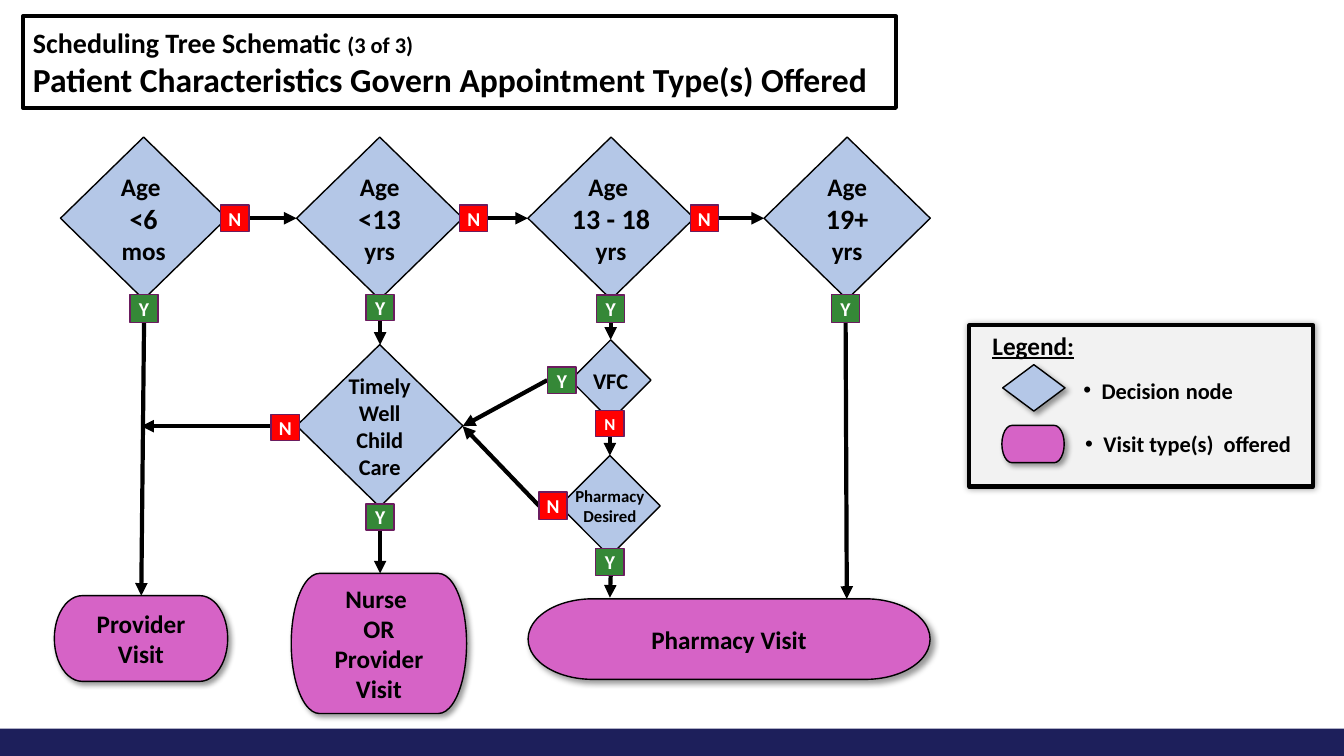
import pptx
import pptx.util
import pptx.dml.color
import pptx.enum.shapes
import pptx.enum.text
import pptx.oxml
import pptx.oxml.ns
from lxml import etree

Cm, Pt = pptx.util.Cm, pptx.util.Pt
Kind = pptx.enum.shapes.MSO_SHAPE
Align = pptx.enum.text.PP_ALIGN
Anchor = pptx.enum.text.MSO_ANCHOR

HUES = {
    "black": "000000", "white": "FFFFFF", "navy": "1D1F5B",
    "node": "B4C7E7", "visit": "D663C6", "grey": "F2F2F2",
    "Y": "358837", "N": "FF0000", "plum": "6B1C5F",
}
FONT = "Calibri"
WIDE, HIGH = 33.87, 19.05
ROW = 5.5
COLS = [3.62, 9.57, 15.4, 21.35]
NODE = (4.19, 4.09)
TAG = 0.71

TITLE = [
    [("Scheduling Tree Schematic ", 20), ("(3 of 3)", 16)],
    [("Patient Characteristics Govern Appointment Type(s) Offered", 24)],
]
AGES = [
    [[("Age ", 18)], [("<6", 20)], [("mos", 18)]],
    [[("Age ", 18), ("<13", 20)], [("yrs", 18)]],
    [[("Age ", 18)], [("13 - 18", 20)], [("yrs", 18)]],
    [[("Age ", 18), ("19+", 20)], [("yrs", 18)]],
]
# centre x, centre y, width, height, wrap, text
NODES = [(x, ROW, *NODE, True, text) for x, text in zip(COLS, AGES)] + [
    (COLS[1], 10.73, *NODE, True, [[("Timely Well Child Care", 16)]]),
    (15.39, 9.58, 2.03, 2.03, False, [[("VFC", 16)]]),
    (15.37, 12.75, 2.54, 2.54, False, [[("Pharmacy", 12)], [("Desired", 12)]]),
]
VISITS = [
    ((1.37, 15.01, 4.37, 2.16), ["Provider Visit"]),
    ((7.34, 14.45, 4.42, 3.53), ["Nurse ", "OR", "Provider", "Visit"]),
    ((13.31, 15.09, 10.13, 2.03), ["Pharmacy Visit"]),
]
SIDE = [5.92, 11.94, 17.75]
TAGS = [("N", x, ROW, 0.66, 14) for x in SIDE] + [
    ("Y", 3.63, 7.77, 0.71, 14),
    ("Y", 9.58, 7.75, 0.66, 14),
    ("Y", 15.39, 7.78, 0.69, 14),
    ("Y", 21.31, 7.77, 0.71, 14),
    ("Y", 9.58, 13.03, 0.66, 14),
    ("N", 7.19, 10.77, 0.66, 14),
    ("Y", 14.16, 9.58, 0.66, 14),
    ("N", 13.94, 12.74, 0.69, 14),
    ("N", 15.37, 10.67, 0.66, 12),
    ("Y", 15.37, 14.16, 0.69, 14),
]
ARROWS = [
    (x + TAG / 2, ROW, col - NODE[0] / 2, ROW)
    for x, col in zip(SIDE, COLS[1:])
] + [
    (3.63, 8.13, 3.56, 15.01),
    (9.58, 8.06, 9.58, 8.69),
    (9.58, 13.34, 9.58, 14.45),
    (6.83, 10.74, 3.56, 10.74),
    (21.31, 8.13, 21.34, 15.09),
    (15.39, 8.13, 15.39, 8.56),
    (13.79, 9.58, 11.66, 10.74),
    (13.59, 12.75, 11.66, 10.74),
    (15.37, 11.0, 15.37, 11.48),
    (15.39, 14.5, 15.37, 15.06),
]
KEYS = [
    (Kind.FLOWCHART_DECISION, "node", (25.27, 9.19, 1.57, 1.17),
     (27.05, 9.32, 5.46, 1.02),
     [("Decision", 16), (" ", 18, False), ("node", 16)]),
    (Kind.FLOWCHART_TERMINATOR, "visit", (25.25, 10.72, 1.57, 0.94),
     (27.1, 10.72, 5.77, 0.94), [("Visit type(s)  offered", 16)]),
]

deck = pptx.Presentation()
deck.slide_width, deck.slide_height = Cm(WIDE), Cm(HIGH)
slide = deck.slides.add_slide(deck.slide_layouts[6])


def rgb(name):
    return pptx.dml.color.RGBColor.from_string(HUES[name])


def sub(root, tag, **attrs):
    return etree.SubElement(root, pptx.oxml.ns.qn(tag), attrs)


def write(shape, lines, hue="black", align=Align.CENTER, inset=True, wrap=True):
    frame = shape.text_frame
    frame.word_wrap = wrap
    frame.vertical_anchor = Anchor.MIDDLE
    if not inset:
        frame.margin_left = frame.margin_right = 0
        frame.margin_top = frame.margin_bottom = 0
    frame.text = "\n".join("" for line in lines)
    for para, line in zip(frame.paragraphs, lines):
        para.alignment = align
        for text, size, *bold in line:
            run = para.add_run()
            run.text = text
            run.font.name = FONT
            run.font.size = Pt(size)
            run.font.bold = bold[0] if bold else True
            run.font.color.rgb = rgb(hue)
    return frame


def draw(kind, box, fill, line="black", width=1, glow=None):
    shape = slide.shapes.add_shape(kind, *map(Cm, box))
    shape.shadow.inherit = False
    shape.fill.solid()
    shape.fill.fore_color.rgb = rgb(fill)
    if line:
        shape.line.color.rgb = rgb(line)
        shape.line.width = Pt(width)
    else:
        shape.line.fill.background()
    if glow:
        blur, dist, turn = glow
        list_ = shape._element.spPr.find(pptx.oxml.ns.qn("a:effectLst"))
        cast = sub(list_, "a:outerShdw", blurRad=str(Pt(blur)),
                   dist=str(Pt(dist)), dir=str(turn * 60000), rotWithShape="0")
        tint = sub(cast, "a:srgbClr", val=HUES["black"])
        sub(tint, "a:alpha", val="40000")
    return shape


def mid(x, y, w, h):
    return x - w / 2, y - h / 2, w, h


def link(ends):
    wire = slide.shapes.add_connector(
        pptx.enum.shapes.MSO_CONNECTOR.STRAIGHT, *map(Cm, ends))
    wire.line.color.rgb = rgb("black")
    wire.line.width = Pt(3)
    sub(wire.line._get_or_add_ln(), "a:tailEnd", type="triangle")
    sub(wire._element.spPr, "a:effectLst")


DROP = (4, 3, 45)
draw(Kind.RECTANGLE, (0, 18.36, WIDE, HIGH - 18.36), "navy", None)
head = draw(Kind.RECTANGLE, (0.58, 0.41, 22, 2.31), "white", width=2.75)
write(head, TITLE, align=Align.LEFT)

for x, y, w, h, wrap, text in NODES:
    node = draw(Kind.FLOWCHART_DECISION, mid(x, y, w, h), "node")
    write(node, text, inset=False, wrap=wrap)
for box, text in VISITS:
    visit = draw(Kind.FLOWCHART_TERMINATOR, box, "visit", glow=DROP)
    write(visit, [[(line, 18)] for line in text])
for ends in ARROWS:
    link(ends)
for mark, x, y, h, size in TAGS:
    tag = draw(Kind.RECTANGLE, mid(x, y, TAG, h), mark, "plum")
    write(tag, [[(mark, size)]], "white", inset=False)

panel = draw(Kind.RECTANGLE, (24.43, 8.2, 8.66, 4.06), "grey", width=3, glow=(5, 0, 0))
frame = write(panel, [[("Legend:", 18)]], align=Align.LEFT)
frame.vertical_anchor = Anchor.TOP
first = frame.paragraphs[0]
first._p.get_or_add_pPr().set("indent", str(Cm(0.33)))
first.runs[0].font.underline = True

for kind, fill, box, area, text in KEYS:
    draw(kind, box, fill, glow=DROP)
    note = slide.shapes.add_textbox(*map(Cm, area))
    frame = write(note, [text], align=Align.LEFT)
    frame.vertical_anchor = Anchor.TOP
    props = frame.paragraphs[0]._p.get_or_add_pPr()
    props.set("marL", str(Cm(0.46)))
    props.set("indent", str(-Cm(0.46)))
    sub(props, "a:buFont", typeface="Arial")
    sub(props, "a:buChar", char="•")

deck.save("out.pptx")
